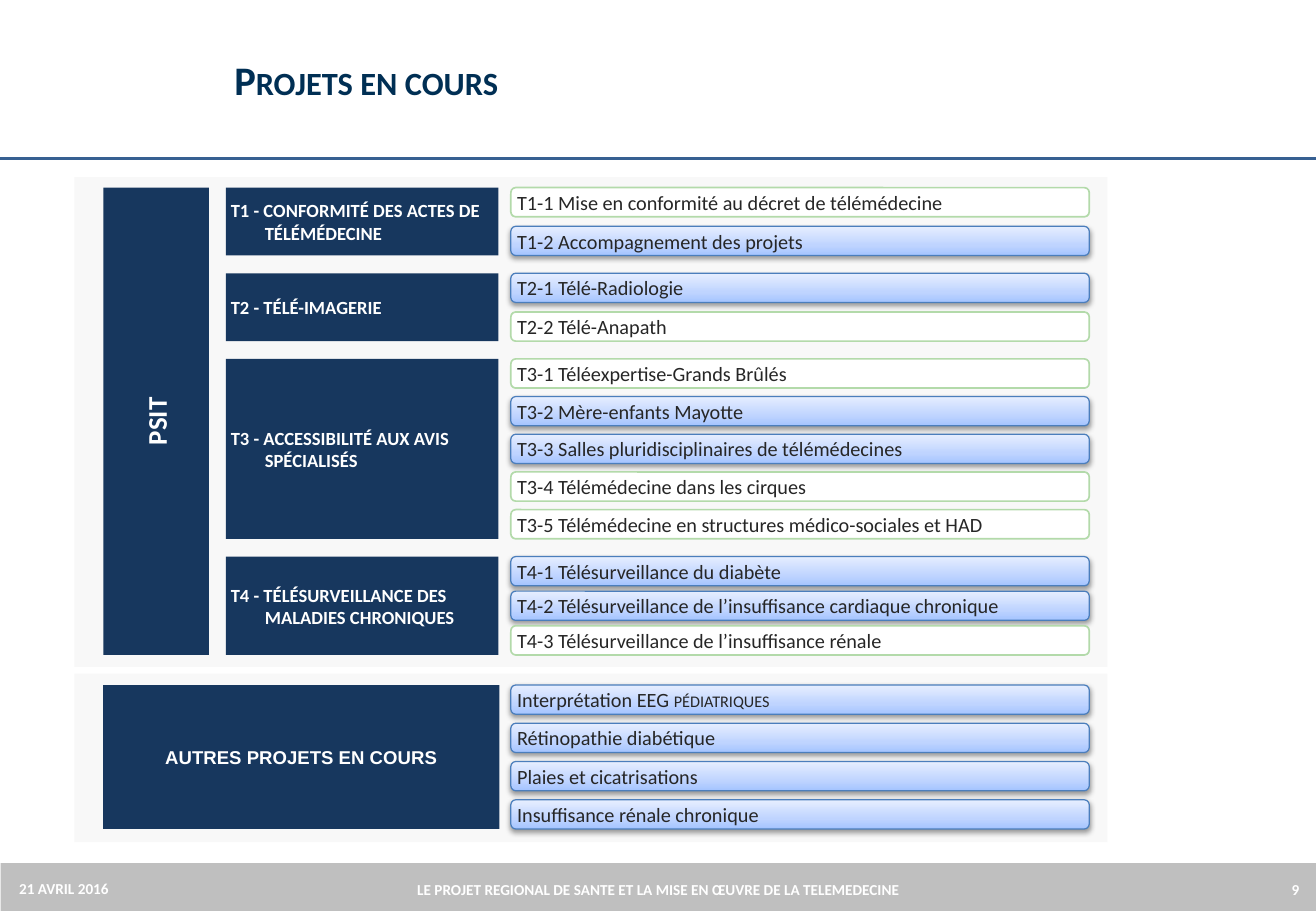
from dataclasses import dataclass

from lxml.etree import SubElement
from pptx import Presentation
from pptx.dml.color import RGBColor
from pptx.enum.shapes import MSO_CONNECTOR, MSO_SHAPE
from pptx.enum.text import MSO_ANCHOR, PP_ALIGN
from pptx.oxml import parse_xml
from pptx.oxml.ns import nsdecls, qn
from pptx.util import Inches, Length, Pt

SLIDE_WIDTH = Inches(10.83)
SLIDE_HEIGHT = Inches(7.5)

NAVY = "17375E"
WHITE = "FFFFFF"
GRADIENT_STOPS = ((0, "A4C4FF"), (35, "BFD4FF"), (100, "E6EEFF"))

OUTER_LEFT = 7.85
PSIT_WIDTH = 8.03
THEME_LEFT = 17.17
THEME_WIDTH = 20.7
PROJECT_LEFT = 38.82
PROJECT_WIDTH = 43.95
PROJECT_HEIGHT = 3.2
THEMES_TOP = 20.6
THEME_GAP = 1.95


@dataclass(frozen=True)
class Box:
    left: float
    top: float
    width: float
    height: float

    def lengths(self) -> tuple[Length, ...]:
        return (across(self.left), down(self.top), across(self.width), down(self.height))


@dataclass(frozen=True)
class TextStyle:
    size: float
    color: str
    bold: bool = True
    font: str = "Calibri"
    align: PP_ALIGN = PP_ALIGN.LEFT
    small_caps: bool = False


@dataclass(frozen=True)
class Project:
    name: str
    active: bool = True
    small_caps_ending: str = ""


@dataclass(frozen=True)
class Theme:
    lines: tuple[str, ...]
    height: float
    projects: tuple[Project, ...]


@dataclass(frozen=True)
class Caption:
    text: str
    box: Box
    style: TextStyle


THEME_STYLE = TextStyle(11, WHITE)
PROJECT_STYLE = TextStyle(12, "262626", bold=False)

THEMES = (
    Theme(("T1 - CONFORMITÉ DES ACTES DE", "TÉLÉMÉDECINE"), 7.45, (
        Project("T1-1 Mise en conformité au décret de télémédecine", False),
        Project("T1-2 Accompagnement des projets"),
    )),
    Theme(("T2 - TÉLÉ-IMAGERIE",), 7.45, (
        Project("T2-1 Télé-Radiologie"),
        Project("T2-2 Télé-Anapath", False),
    )),
    Theme(("T3 - ACCESSIBILITÉ AUX AVIS", "SPÉCIALISÉS"), 19.75, (
        Project("T3-1 Téléexpertise-Grands Brûlés", False),
        Project("T3-2 Mère-enfants Mayotte"),
        Project("T3-3 Salles pluridisciplinaires de télémédecines"),
        Project("T3-4 Télémédecine dans les cirques", False),
        Project("T3-5 Télémédecine en structures médico-sociales et HAD", False),
    )),
    Theme(("T4 - TÉLÉSURVEILLANCE DES", "MALADIES CHRONIQUES"), 10.8, (
        Project("T4-1 Télésurveillance du diabète"),
        Project("T4-2 Télésurveillance de l’insuffisance cardiaque chronique"),
        Project("T4-3 Télésurveillance de l’insuffisance rénale", False),
    )),
)

OTHER_BOX = Box(OUTER_LEFT, 75.2, 30.1, 15.8)
OTHER_PROJECTS = (
    Project("Interprétation EEG ", small_caps_ending="pédiatriques"),
    Project("Rétinopathie diabétique"),
    Project("Plaies et cicatrisations"),
    Project("Insuffisance rénale chronique"),
)

CAPTIONS = (
    Caption("Projets en cours", Box(16.9, 1.47, 78.1, 14.5),
            TextStyle(24, "002F54", small_caps=True)),
    Caption("21 AVRIL 2016", Box(0.55, 95.2, 17.4, 4.7), TextStyle(9, WHITE)),
    Caption("LE PROJET REGIONAL DE SANTE ET LA MISE EN ŒUVRE DE LA TELEMEDECINE",
            Box(22.62, 95.2, 54.75, 4.8), TextStyle(9, WHITE, align=PP_ALIGN.CENTER)),
    Caption("9", Box(94.55, 95.2, 5.08, 4.8), TextStyle(9, WHITE, align=PP_ALIGN.RIGHT)),
)


def across(percent: float) -> Length:
    return Length(round(SLIDE_WIDTH * percent / 100))


def down(percent: float) -> Length:
    return Length(round(SLIDE_HEIGHT * percent / 100))


def color(value: str) -> RGBColor:
    return RGBColor.from_string(value)


def write_lines(shape, lines: tuple[str, ...], style: TextStyle) -> None:
    frame = shape.text_frame
    frame.word_wrap = True
    frame.vertical_anchor = MSO_ANCHOR.MIDDLE
    for index, line in enumerate(lines):
        paragraph = frame.add_paragraph() if index else frame.paragraphs[0]
        paragraph.alignment = style.align
        if index:
            paragraph._p.get_or_add_pPr().set("marL", str(Inches(0.28)))
        paragraph.font.size = Pt(style.size)
        paragraph.font.name = style.font
        paragraph.font.bold = style.bold
        paragraph.font.color.rgb = color(style.color)
        run = paragraph.add_run()
        run.text = line
        if style.small_caps:
            set_small_caps(run)


def set_small_caps(run) -> None:
    run._r.get_or_add_rPr().set("cap", "small")


def add_block(slide, box: Box, fill: str, kind: MSO_SHAPE = MSO_SHAPE.RECTANGLE):
    shape = slide.shapes.add_shape(kind, *box.lengths())
    shape.shadow.inherit = False
    shape.fill.solid()
    shape.fill.fore_color.rgb = color(fill)
    shape.line.fill.background()
    frame = shape.text_frame
    frame.margin_left = frame.margin_right = Inches(0.04)
    frame.margin_top = frame.margin_bottom = Inches(0.05)
    return shape


def add_glow(shape) -> None:
    properties = shape._element.spPr
    stops = "".join(
        f'<a:gs pos="{position * 1000}"><a:srgbClr val="{value}"/></a:gs>'
        for position, value in GRADIENT_STOPS
    )
    gradient = parse_xml(
        f'<a:gradFill {nsdecls("a")} rotWithShape="1"><a:gsLst>{stops}</a:gsLst>'
        '<a:lin ang="16200000" scaled="0"/></a:gradFill>'
    )
    properties.replace(properties.find(qn("a:solidFill")), gradient)
    properties.find(qn("a:effectLst")).append(parse_xml(
        f'<a:outerShdw {nsdecls("a")} blurRad="{Pt(3.1)}" dist="{Pt(1.6)}" dir="5400000" '
        'rotWithShape="0"><a:srgbClr val="000000"><a:alpha val="38000"/></a:srgbClr></a:outerShdw>'
    ))


def add_projects(slide, projects: tuple[Project, ...], top: float, height: float) -> None:
    pitch = (height - PROJECT_HEIGHT) / (len(projects) - 1)
    for index, project in enumerate(projects):
        box = Box(PROJECT_LEFT, top + index * pitch, PROJECT_WIDTH, PROJECT_HEIGHT)
        shape = add_block(slide, box, WHITE, MSO_SHAPE.ROUNDED_RECTANGLE)
        shape.line.color.rgb = color("4B7EBC" if project.active else "B3DAAA")
        shape.line.width = Pt(0.75 if project.active else 1)
        if project.active:
            add_glow(shape)
        write_lines(shape, (project.name,), PROJECT_STYLE)
        if project.small_caps_ending:
            run = shape.text_frame.paragraphs[0].add_run()
            run.text = project.small_caps_ending
            set_small_caps(run)


def add_themes(slide) -> None:
    top = THEMES_TOP
    for theme in THEMES:
        block = add_block(slide, Box(THEME_LEFT, top, THEME_WIDTH, theme.height), NAVY)
        write_lines(block, theme.lines, THEME_STYLE)
        add_projects(slide, theme.projects, top, theme.height)
        top += theme.height + THEME_GAP
    psit_box = Box(OUTER_LEFT, THEMES_TOP, PSIT_WIDTH, top - THEME_GAP - THEMES_TOP)
    psit = add_block(slide, psit_box, NAVY)
    psit.text_frame._txBody.bodyPr.set("vert", "vert270")
    write_lines(psit, ("PSIT",), TextStyle(16, WHITE, align=PP_ALIGN.CENTER))


def main() -> None:
    presentation = Presentation()
    presentation.slide_width = SLIDE_WIDTH
    presentation.slide_height = SLIDE_HEIGHT
    slide = presentation.slides.add_slide(presentation.slide_layouts[6])

    add_block(slide, Box(0.05, 94.75, 99.95, 5.25), "BFBFBF")
    rule = slide.shapes.add_connector(
        MSO_CONNECTOR.STRAIGHT, 0, down(17.4), SLIDE_WIDTH, down(17.4))
    rule.line.color.rgb = color("376092")
    rule.line.width = Pt(1.75)
    SubElement(rule._element.spPr, qn("a:effectLst"))
    for top, height in ((19.45, 53.75), (73.95, 18.5)):
        add_block(slide, Box(5.65, top, 78.5, height), "F8F8F8")

    for caption in CAPTIONS:
        text_box = slide.shapes.add_textbox(*caption.box.lengths())
        write_lines(text_box, (caption.text,), caption.style)

    add_themes(slide)
    add_projects(slide, OTHER_PROJECTS, OTHER_BOX.top, OTHER_BOX.height)
    other = add_block(slide, OTHER_BOX, NAVY)
    write_lines(other, ("AUTRES PROJETS EN COURS",),
                TextStyle(11, WHITE, font="Arial", align=PP_ALIGN.CENTER))
    presentation.save("out.pptx")


if __name__ == "__main__":
    main()
